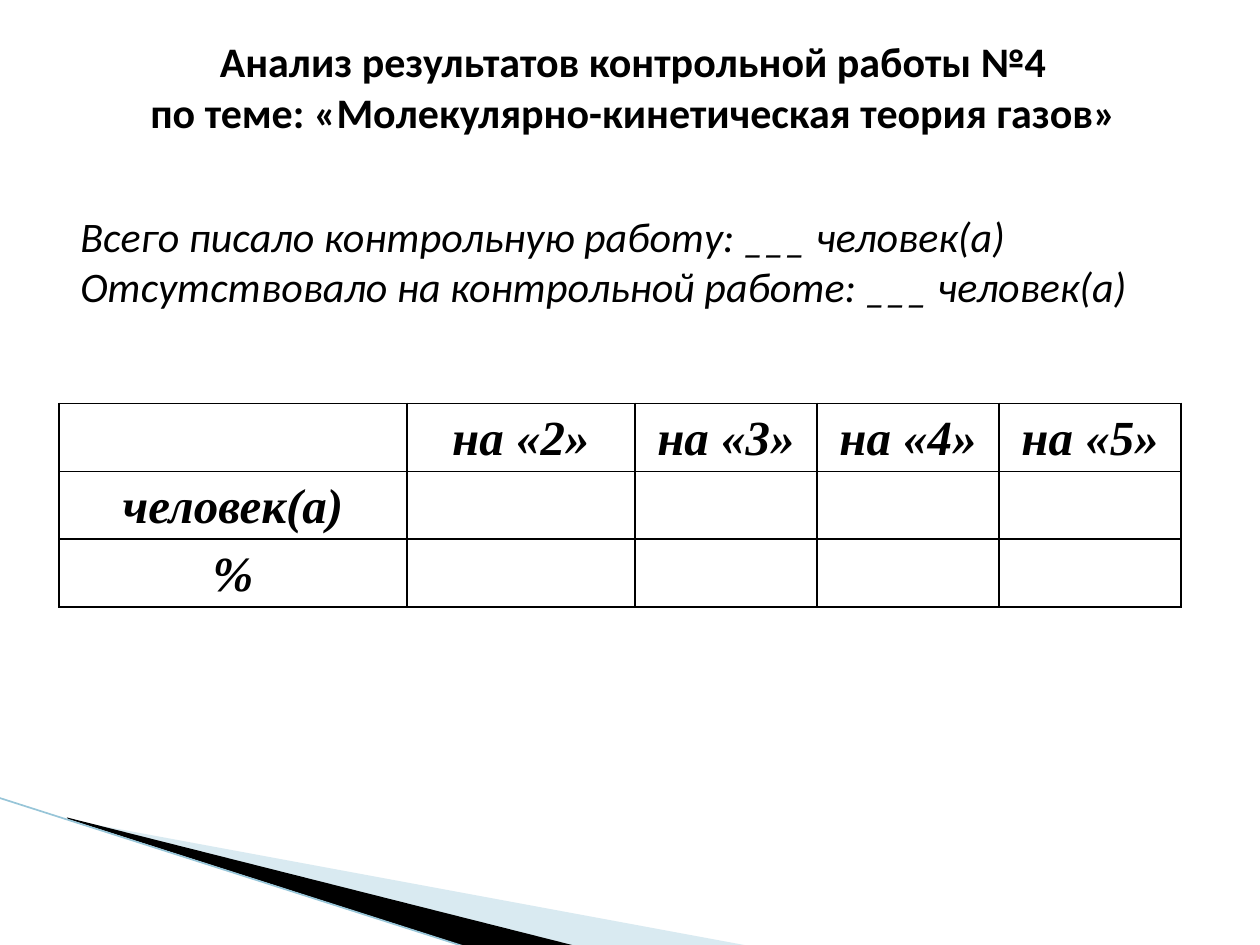
from pptx import Presentation
from pptx.dml.color import RGBColor
from pptx.enum.text import MSO_ANCHOR, PP_ALIGN
from pptx.oxml import parse_xml
from pptx.oxml.ns import nsdecls, qn
from pptx.util import Cm, Pt
from lxml.etree import SubElement

# Content
TITLE = ["Анализ результатов контрольной работы №4",
         "по теме: «Молекулярно-кинетическая теория газов»"]
COUNTS = ["Всего писало контрольную работу: ___ человек(а)",
          "Отсутствовало на контрольной работе: ___ человек(а)"]
GRADES = [["", "на «2»", "на «3»", "на «4»", "на «5»"],
          ["человек(а)", "", "", "", ""],
          ["%", "", "", "", ""]]

# Theme
THEME = dict(ink="000000", pale="A0CBDC", edge="97C5D8",
             font="Calibri", table_font="Times New Roman",
             text_size=24, table_size=28)

# Layout, in centimetres
TITLE_BOX = (0.51, 0.58, 24.51, 2.31)
COUNTS_BOX = (0.51, 4.11, 24.31, 3.07)
COUNTS_INDENT = 0.86
TABLE_AT = (1.19, 8.13)
COL_WIDTHS = [7.01, 4.6, 3.67, 3.67, 3.67]
ROW_HEIGHT = 1.37
WEDGES = [  # points, colour, opacity in percent
    ([(1.4, 16.53), (15.11, 19.07), (11.58, 19.07), (1.4, 16.51)], "pale", 40),
    ([(1.35, 16.48), (11.61, 19.07), (9.45, 19.1), (1.37, 16.51)], "ink", 100),
]
EDGE = (-0.03, 16.08, 9.42, 19.1)


def color(name):
    return RGBColor.from_string(THEME[name])


def add_run(p, text, font, size, bold=False, italic=False):
    r = p.add_run()
    r.text = text
    f = r.font
    f.name, f.size, f.bold, f.italic = font, Pt(size), bold, italic
    f.color.rgb = color("ink")


def write_lines(tf, lines, align, **style):
    tf.word_wrap = True
    for i, line in enumerate(lines):
        p = tf.paragraphs[0] if i == 0 else tf.add_paragraph()
        p.alignment = align
        p.space_before = Pt(0)
        add_run(p, line, THEME["font"], THEME["text_size"], **style)


def add_wedge(s, points, fill, opacity):
    fb = s.shapes.build_freeform(Cm(points[0][0]), Cm(points[0][1]))
    fb.add_line_segments([(Cm(x), Cm(y)) for x, y in points[1:]], close=True)
    sp = fb.convert_to_shape()
    sp.shadow.inherit = False
    sp.fill.solid()
    sp.fill.fore_color.rgb = color(fill)
    sp.line.fill.background()
    if opacity < 100:
        clr = sp.fill._xPr.find(".//" + qn("a:srgbClr"))
        SubElement(clr, qn("a:alpha"), val=str(opacity * 1000))


def add_borders(cell):
    tcPr = cell._tc.get_or_add_tcPr()
    for side in ("lnL", "lnR", "lnT", "lnB"):
        tcPr.append(parse_xml(
            f'<a:{side} {nsdecls("a")} w="12700"><a:solidFill>'
            f'<a:srgbClr val="{THEME["ink"]}"/></a:solidFill></a:{side}>'))


def add_grades(s):
    gf = s.shapes.add_table(len(GRADES), len(COL_WIDTHS), *map(Cm, TABLE_AT),
                            Cm(sum(COL_WIDTHS)), Cm(ROW_HEIGHT * len(GRADES)))
    table = gf.table
    table.first_row = table.horz_banding = False
    for col, width in zip(table.columns, COL_WIDTHS):
        col.width = Cm(width)
    for row, texts in zip(table.rows, GRADES):
        row.height = Cm(ROW_HEIGHT)
        for cell, text in zip(row.cells, texts):
            cell.margin_left = cell.margin_right = Cm(0.18)
            cell.margin_top = cell.margin_bottom = 0
            add_borders(cell)
            cell.fill.background()
            if text:
                p = cell.text_frame.paragraphs[0]
                p.alignment = PP_ALIGN.CENTER
                p.line_spacing = 1.15
                add_run(p, text, THEME["table_font"], THEME["table_size"],
                        bold=True, italic=True)


def main():
    prs = Presentation()
    prs.slide_width, prs.slide_height = Cm(25.4), Cm(19.05)
    s = prs.slides.add_slide(prs.slide_layouts[5])

    # Corner decoration
    for wedge in WEDGES:
        add_wedge(s, *wedge)
    line = s.shapes.add_connector(1, *map(Cm, EDGE))
    line.line.color.rgb = color("edge")
    line.line.width = Pt(0.95)
    SubElement(line._element.spPr, qn("a:effectLst"))

    # Title
    title = s.shapes.title
    title.left, title.top, title.width, title.height = map(Cm, TITLE_BOX)
    title.text_frame.vertical_anchor = MSO_ANCHOR.MIDDLE
    write_lines(title.text_frame, TITLE, PP_ALIGN.CENTER, bold=True)

    # Attendance
    tf = s.shapes.add_textbox(*map(Cm, COUNTS_BOX)).text_frame
    tf.vertical_anchor = MSO_ANCHOR.TOP
    write_lines(tf, COUNTS, PP_ALIGN.LEFT, italic=True)
    for p in tf.paragraphs:
        p._p.get_or_add_pPr().set("indent", str(Cm(COUNTS_INDENT)))

    # Grades table
    add_grades(s)
    prs.save("out.pptx")


if __name__ == "__main__":
    main()
